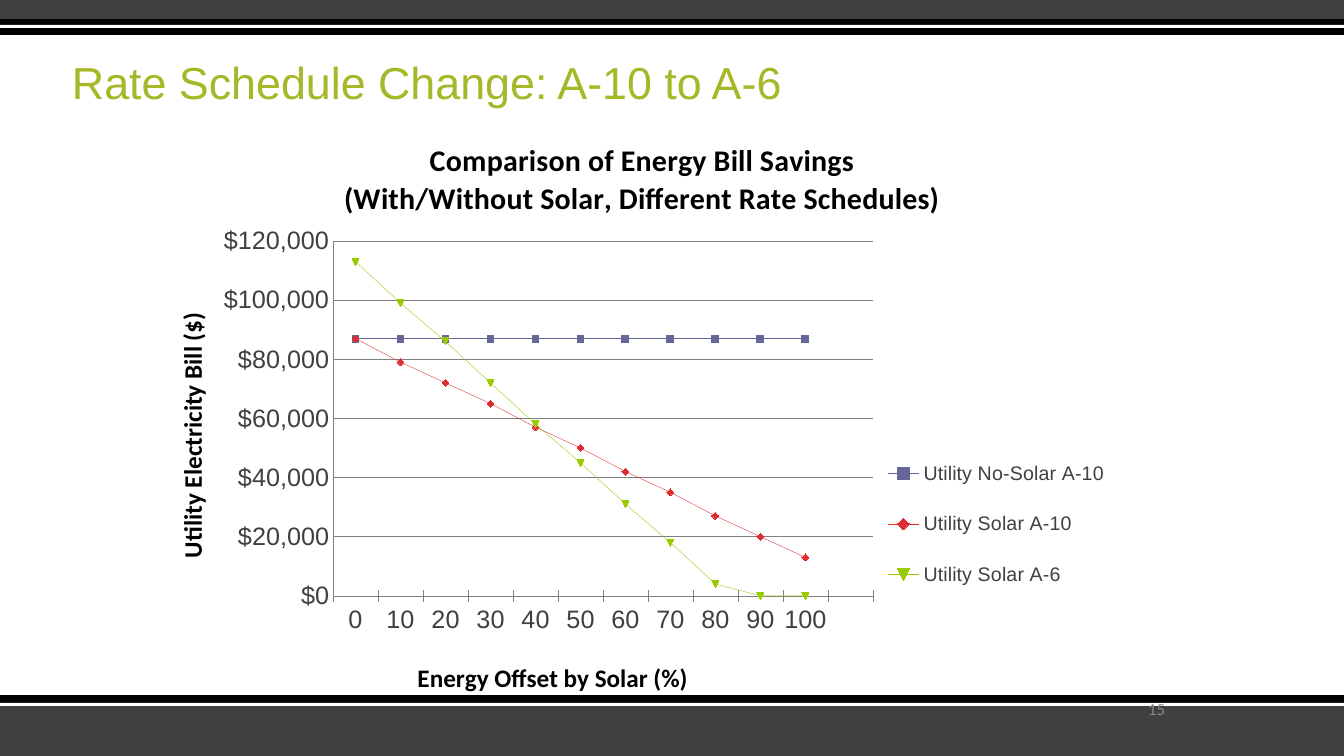
from lxml import etree
from pptx import Presentation
from pptx import util as u
from pptx.chart import data as chart_data
from pptx.dml.color import RGBColor
from pptx.enum import chart as ch, shapes, text
from pptx.oxml.ns import qn

WIDTH, HEIGHT = 1344, 756
CHART_BOX = (140, 113, 997, 597)
BANDS = [(706, 50, "404040"), (695, 11, "000000"), (703, 3, "FFFFFF"),
         (0, 19, "404040"), (19, 16, "000000"), (25, 3, "FFFFFF")]
BILLS = [
    ("Utility No-Solar A-10", "666699", [87000] * 11),
    ("Utility Solar A-10", "DD2D32",
     [87000, 79000, 72000, 65000, 57000, 50000, 42000, 35000, 27000, 20000, 13000]),
    ("Utility Solar A-6", "99CC00",
     [113000, 99000, 86000, 72000, 58000, 45000, 31000, 18000, 4000, 0, 0]),
]
LAYOUTS = {
    "c:chart/c:title": (341, 137),
    "c:chart/c:plotArea": (333, 241, 540, 355),
    "c:chart/c:plotArea/c:catAx/c:title": (413, 656),
    "c:chart/c:plotArea/c:valAx/c:title": (170, 308),
    "c:chart/c:legend": (866, 434, 260, 180),
}


def px(length):
    return u.Emu(round(length * 914400 / 100.8))


def rgb(value):
    return RGBColor.from_string(value)


class RateSlide:
    """Draws the rate comparison slide in one consistent style."""

    ink, rule, accent = "404040", "808080", "A6B727"
    body, heading = "Arial", "Calibri"

    def __init__(self, deck):
        self.slide = deck.slides.add_slide(deck.slide_layouts[6])

    def style(self, font, size, color, name, bold=False):
        font.size, font.name, font.bold = u.Pt(size), name, bold
        font.color.rgb = rgb(color)

    def band(self, top, height, color):
        stripe = self.slide.shapes.add_shape(
            shapes.MSO_SHAPE.RECTANGLE, 0, px(top), px(WIDTH), px(height))
        stripe.shadow.inherit = False
        stripe.fill.solid()
        stripe.fill.fore_color.rgb = rgb(color)
        stripe.line.fill.background()

    def label(self, box, words, size, color, name, anchor, align, spacing=1.0):
        frame = self.slide.shapes.add_textbox(*map(px, box)).text_frame
        frame.word_wrap = True
        frame.vertical_anchor = anchor
        frame.text = words
        line = frame.paragraphs[0]
        line.alignment, line.line_spacing = align, spacing
        self.style(line.runs[0].font, size, color, name)

    def thin(self, line, color):
        line.width = u.Pt(0.25)
        line.color.rgb = rgb(color)

    def caption(self, title, words, size):
        title.text_frame.text = words
        for line in title.text_frame.paragraphs:
            for run in line.runs:
                self.style(run.font, size, "000000", self.heading, True)

    def place(self, chart, target, box):
        part = chart.element.xpath(target)[0]
        for old in part.findall(qn("c:layout")):
            part.remove(old)
        layout = etree.Element(qn("c:layout"))
        manual = etree.SubElement(layout, qn("c:manualLayout"))
        left, top, width, height = CHART_BOX
        settings = [("xMode", "edge"), ("yMode", "edge")]
        if target.endswith("plotArea"):
            settings.insert(0, ("layoutTarget", "inner"))
        fractions = ((box[0] - left) / width, (box[1] - top) / height,
                     *(side / whole for side, whole in zip(box[2:], (width, height))))
        settings += [(key, f"{value:.4f}") for key, value in zip("xywh", fractions)]
        for key, value in settings:
            etree.SubElement(manual, qn(f"c:{key}"), val=value)
        overlay = part.find(qn("c:overlay"))
        if overlay is None:
            part.insert(0, layout)
        else:
            overlay.addprevious(layout)

    def line_chart(self):
        bills = chart_data.CategoryChartData()
        bills.categories = [str(offset) for offset in range(0, 101, 10)] + [""]
        for name, _, values in BILLS:
            bills.add_series(name, values + [None])
        chart = self.slide.shapes.add_chart(
            ch.XL_CHART_TYPE.LINE_MARKERS, *map(px, CHART_BOX), bills).chart
        self.style(chart.font, 18, self.ink, self.body)
        self.caption(chart.chart_title, "Comparison of Energy Bill Savings\n"
                     "(With/Without Solar, Different Rate Schedules)", 21.4)
        chart.plots[0].vary_by_categories = False
        for series, (_, color, _) in zip(chart.plots[0].series, BILLS):
            series.smooth = False
            self.thin(series.format.line, color)
            series.marker.style = ch.XL_MARKER_STYLE.AUTOMATIC
            series.marker.size = 5
            series.marker.format.fill.solid()
            series.marker.format.fill.fore_color.rgb = rgb(color)
            self.thin(series.marker.format.line, color)

        offset_axis, bill_axis = chart.category_axis, chart.value_axis
        for axis, words, tick in (
                (offset_axis, "Energy Offset by Solar (%)", ch.XL_TICK_MARK.CROSS),
                (bill_axis, "Utility Electricity Bill ($)", ch.XL_TICK_MARK.NONE)):
            self.caption(axis.axis_title, words, 18)
            axis.major_tick_mark = tick
            axis.minor_tick_mark = ch.XL_TICK_MARK.NONE
            self.thin(axis.format.line, self.rule)
        bill_axis.minimum_scale, bill_axis.maximum_scale = 0, 120000
        bill_axis.major_unit = 20000
        bill_axis.tick_labels.number_format = "\\$#,##0"
        bill_axis.tick_labels.number_format_is_linked = False
        self.thin(bill_axis.major_gridlines.format.line, self.rule)
        chart.element.xpath(".//c:valAx/c:title//a:bodyPr")[0].set("rot", "-5400000")

        chart.has_legend = True
        chart.legend.position = ch.XL_LEGEND_POSITION.RIGHT
        chart.legend.include_in_layout = False
        self.style(chart.legend.font, 14, self.ink, self.body)
        for target, box in LAYOUTS.items():
            self.place(chart, target, box)


def main():
    deck = Presentation()
    deck.slide_width, deck.slide_height = px(WIDTH), px(HEIGHT)
    page = RateSlide(deck)
    for top, height, color in BANDS:
        page.band(top, height, color)
    page.label((62, 27, 907, 87), "Rate Schedule Change: A-10 to A-6", 32, page.accent,
               page.body, text.MSO_ANCHOR.BOTTOM, text.PP_ALIGN.LEFT, 0.9)
    page.line_chart()
    page.label((940, 689, 235, 40), "15", 12, "898989",
               page.heading, text.MSO_ANCHOR.MIDDLE, text.PP_ALIGN.RIGHT)
    deck.save("out.pptx")


if __name__ == "__main__":
    main()
